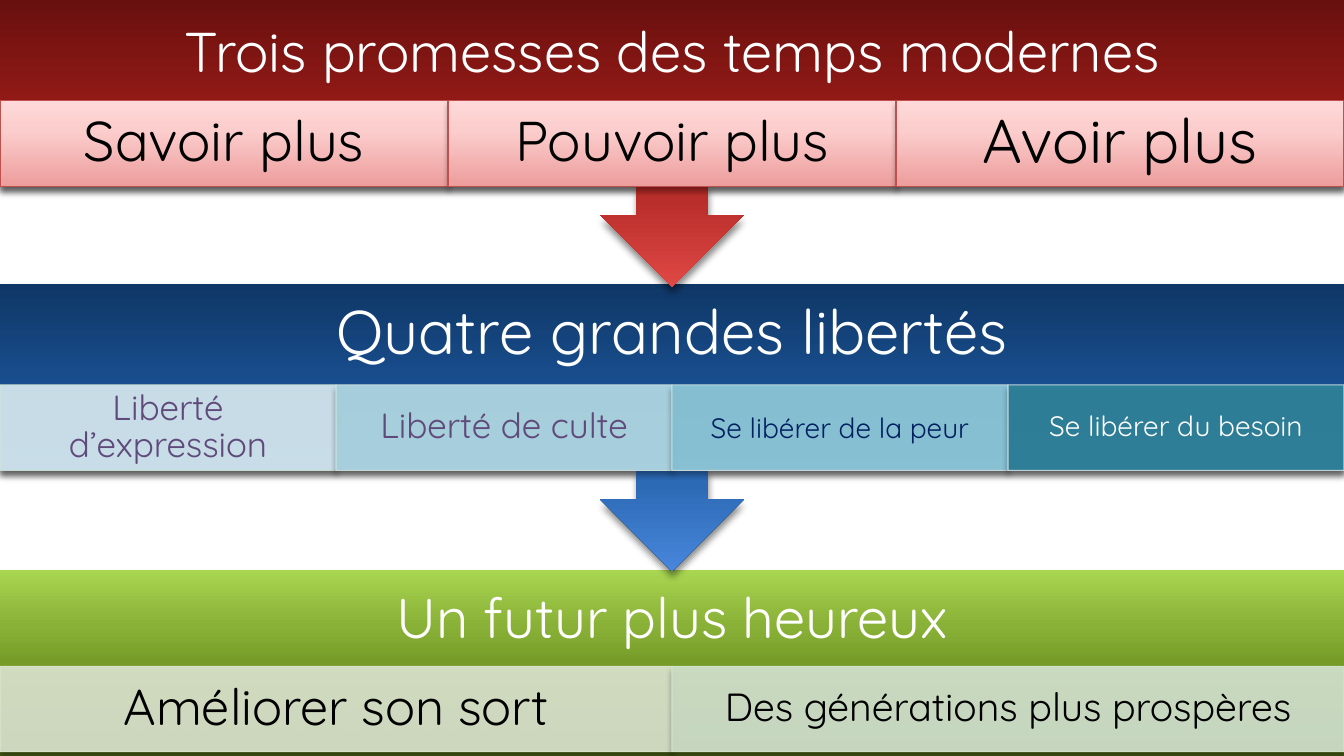
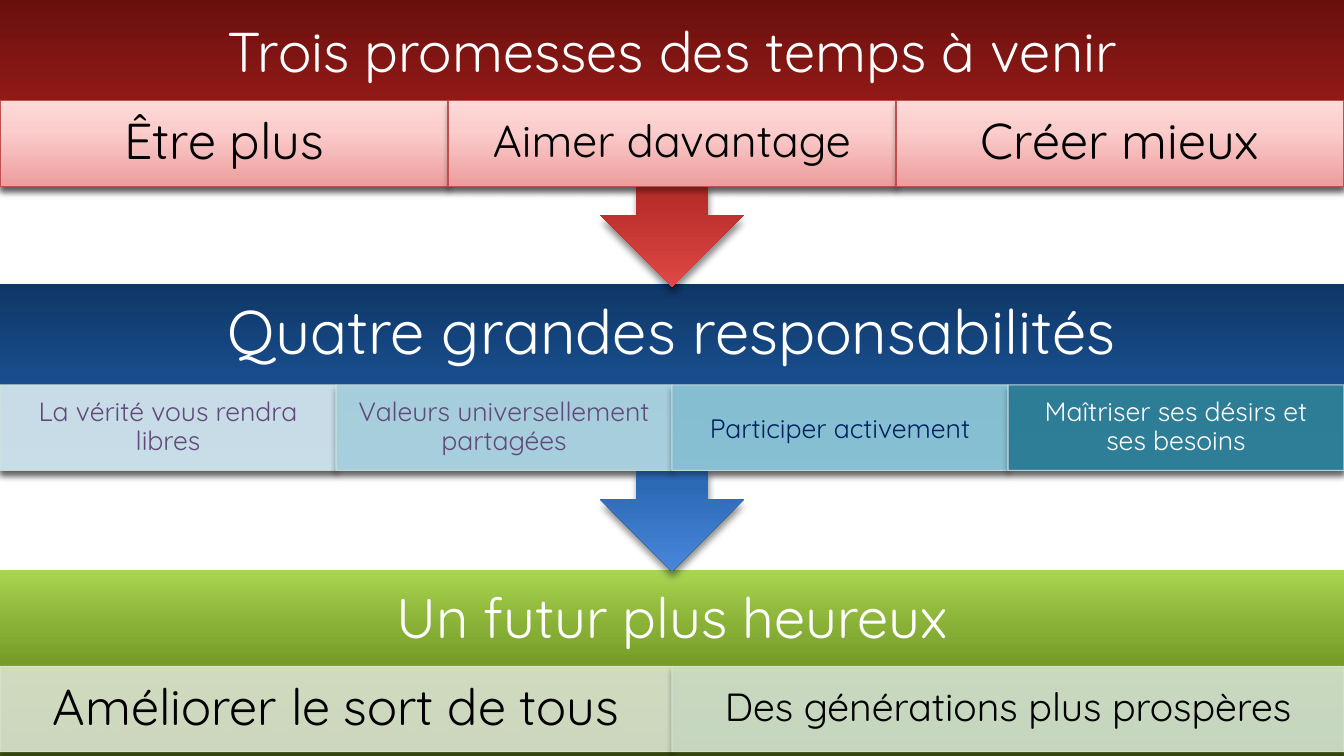
from lxml import etree
from pptx import Presentation
from pptx.dml.color import RGBColor
from pptx.enum.shapes import MSO_SHAPE as Shape
from pptx.enum.text import MSO_ANCHOR as Anchor, PP_ALIGN as Align
from pptx.oxml.ns import qn
from pptx.util import Pt

WIDTH, HEIGHT = 960, 540
CELL_HEIGHT = 61
FONT = "Quicksand"
UP, DOWN = 90, 270

# A gradient's colours are keyed by its name and each stop's position.
COLOURS = {
    "green 0": "4A6316", "green 50": "769C27", "green 70": "89B137", "green 100": "A9D651",
    "blue 0": "0F3766", "blue 50": "1D59A1", "blue 70": "2D6AB6", "blue 100": "4786DB",
    "red 0": "68100E", "red 50": "A41E1A", "red 70": "B92E2A", "red 100": "DF4845",
    "pink 0": "EC9E9D", "pink 65": "FBCDCC", "pink 100": "FFD9D9", "pink line": "C0504D",
    "sage": "DEE7D1", "mint": "D6E6D2",
    "ice": "DBEEF4", "ice line": "D2E5D5",
    "sky": "B7DEE8", "sky line": "D2E4DC",
    "aqua": "93CDDD", "aqua line": "D2E3E2",
    "teal": "31859C", "teal line": "D2DEE3",
    "white": "FFFFFF", "black": "000000", "purple": "604A7B", "navy": "002060",
}
GRADIENTS = {
    "green": (0, 50, 70, 100),
    "blue": (0, 50, 70, 100),
    "red": (0, 50, 70, 100),
    "pink": (0, 65, 100),
}

# Bands from back to front; each cell is (fill, line, text colour, line spacing).
BANDS = [
    {"name": "green", "shape": Shape.RECTANGLE, "top": 407, "height": 133,
     "direction": UP, "shadow": (35, 4), "size": 40, "spacing": 0.9, "cell_top": 476,
     "cells": [("sage", "sage", "black", 0.9), ("mint", "mint", "black", 0.9)]},
    {"name": "blue", "shape": Shape.DOWN_ARROW_CALLOUT, "top": 203, "height": 205,
     "direction": DOWN, "shadow": (45, 5), "size": 44, "spacing": 0.9, "cell_top": 275,
     "cells": [("ice", "ice line", "purple", 0.9), ("sky", "sky line", "purple", 0.9),
               ("aqua", "aqua line", "navy", 1.0), ("teal", "teal line", "white", 0.9)]},
    {"name": "red", "shape": Shape.DOWN_ARROW_CALLOUT, "top": 0, "height": 205,
     "direction": DOWN, "shadow": (45, 5), "size": 40, "spacing": 1.0, "cell_top": 72,
     "cells": [("pink", "pink line", "black", 0.9)] * 3},
]

# Per slide and band: the heading, then each cell's text and size.
SLIDES = [
    {
        "green": ("Un futur plus heureux", [
            ("Améliorer son sort", 36), ("Des générations plus prospères", 28)]),
        "blue": ("Quatre grandes libertés", [
            ("Liberté d’expression", 25), ("Liberté de culte", 25),
            ("Se libérer de la peur", 20), ("Se libérer du besoin", 20)]),
        "red": ("Trois promesses des temps modernes", [
            ("Savoir plus", 40), ("Pouvoir plus", 40), ("Avoir plus", 44)]),
    },
    {
        "green": ("Un futur plus heureux", [
            ("Améliorer le sort de tous", 36), ("Des générations plus prospères", 28)]),
        "blue": ("Quatre grandes responsabilités", [
            ("La vérité vous rendra libres", 19), ("Valeurs universellement partagées", 19),
            ("Participer activement", 19), ("Maîtriser ses désirs et ses besoins", 19)]),
        "red": ("Trois promesses des temps à venir", [
            ("Être plus", 36), ("Aimer davantage", 32), ("Créer mieux", 36)]),
    },
]


def add_block(slide, kind, box, fill, line, direction, shadow):
    """Add a shape with a gradient or 90 % opaque fill and a shadow (opacity, blur)."""
    shape = slide.shapes.add_shape(kind, *map(Pt, box))
    properties = shape._element.spPr
    if line:
        shape.line.color.rgb = RGBColor.from_string(COLOURS[line])
        shape.line.width = Pt(0.75)
    else:
        shape.line.fill.background()
    if fill in GRADIENTS:
        shape.fill.gradient()
        shape.fill.gradient_angle = direction
        stops = properties.find(".//" + qn("a:gsLst"))
        for stop in list(stops):
            stops.remove(stop)
        for position in GRADIENTS[fill]:
            stop = etree.SubElement(stops, qn("a:gs"), pos=str(position * 1000))
            etree.SubElement(stop, qn("a:srgbClr"), val=COLOURS[f"{fill} {position}"])
    else:
        shape.fill.solid()
        shape.fill.fore_color.rgb = RGBColor.from_string(COLOURS[fill])
        for colour in list(properties.iter(qn("a:srgbClr"))):
            etree.SubElement(colour, qn("a:alpha"), val="90000")

    shape.shadow.inherit = False
    opacity, blur = shadow
    outer = etree.SubElement(
        properties.find(qn("a:effectLst")), qn("a:outerShdw"),
        blurRad=str(Pt(blur)), dist=str(Pt(3)), dir="5400000", rotWithShape="0")
    colour = etree.SubElement(outer, qn("a:srgbClr"), val=COLOURS["black"])
    etree.SubElement(colour, qn("a:alpha"), val=str(opacity * 1000))
    return shape


def write_text(shape, text, size, colour, spacing, margin_bottom=0):
    frame = shape.text_frame
    frame.word_wrap = True
    frame.vertical_anchor = Anchor.MIDDLE
    frame.margin_left = frame.margin_right = Pt(0.56 * size)
    frame.margin_top, frame.margin_bottom = 0, Pt(margin_bottom)
    frame.text = text
    paragraph = frame.paragraphs[0]
    paragraph.alignment = Align.CENTER
    paragraph.line_spacing = spacing
    font = paragraph.runs[0].font
    font.name, font.size = FONT, Pt(size)
    font.color.rgb = RGBColor.from_string(COLOURS[colour])


presentation = Presentation()
presentation.slide_width, presentation.slide_height = Pt(WIDTH), Pt(HEIGHT)

for content in SLIDES:
    slide = presentation.slides.add_slide(presentation.slide_layouts[6])
    for band in BANDS:
        heading, labels = content[band["name"]]
        shape = add_block(slide, band["shape"], (0, band["top"], WIDTH, band["height"]),
                          band["name"], None, band["direction"], band["shadow"])
        write_text(shape, heading, band["size"], "white", band["spacing"], CELL_HEIGHT)

        cell_width = WIDTH / len(labels)
        for column, (style, label) in enumerate(zip(band["cells"], labels)):
            fill, line, text_colour, spacing = style
            text, size = label
            box = (column * cell_width, band["cell_top"], cell_width, CELL_HEIGHT)
            shape = add_block(slide, Shape.RECTANGLE, box, fill, line, UP, (35, 4))
            write_text(shape, text, size, text_colour, spacing)

presentation.save("out.pptx")
